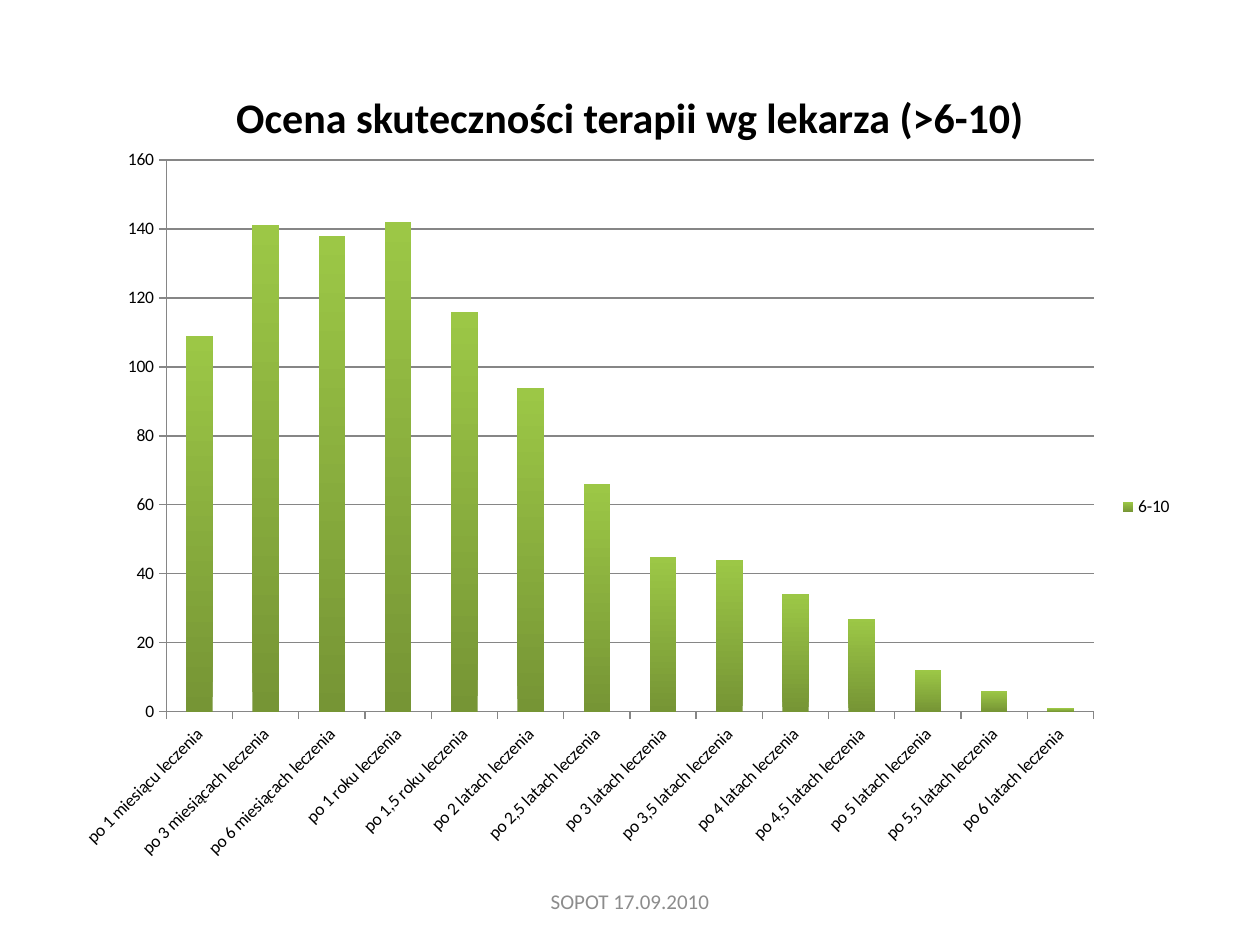
import pptx
import pptx.chart.data
import pptx.dml.color
import pptx.enum.chart
import pptx.enum.text
import pptx.oxml
import pptx.oxml.ns
import pptx.util
from dataclasses import dataclass


@dataclass(frozen=True)
class Theme:
    font: str = "Calibri"
    text: str = "000000"
    muted: str = "8C8C8C"
    line: str = "868686"
    bar_bottom: str = "769535"
    bar_top: str = "9CC746"
    title_size: int = 24
    footer_size: int = 12
    chart_size: int = 10


THEME = Theme()
WIDTH, HEIGHT = 10, 7.5
PERIODS = [
    "1 miesiącu", "3 miesiącach", "6 miesiącach", "1 roku", "1,5 roku",
    "2 latach", "2,5 latach", "3 latach", "3,5 latach", "4 latach",
    "4,5 latach", "5 latach", "5,5 latach", "6 latach",
]
RATINGS = [109, 141, 138, 142, 116, 94, 66, 45, 44, 34, 27, 12, 6, 1]


def color(value):
    return pptx.dml.color.RGBColor.from_string(value)


def inches(box):
    return [pptx.util.Inches(length) for length in box]


def add_text(page, box, text, size, fill, bold=False):
    frame = page.shapes.add_textbox(*inches(box)).text_frame
    frame.word_wrap = True
    frame.vertical_anchor = pptx.enum.text.MSO_ANCHOR.MIDDLE
    para = frame.paragraphs[0]
    para.alignment = pptx.enum.text.PP_ALIGN.CENTER
    span = para.add_run()
    span.text = text
    span.font.name = THEME.font
    span.font.size = pptx.util.Pt(size)
    span.font.bold = bold
    span.font.color.rgb = color(fill)


def style_line(line):
    line.color.rgb = color(THEME.line)
    line.width = pptx.util.Pt(0.75)


def set_plot_area(chart, box, left, top, right, bottom):
    """Fix the inner plot area by its margins, in inches, inside the box."""
    _, _, width, height = box
    shares = {"x": left / width, "y": top / height,
              "w": 1 - (left + right) / width,
              "h": 1 - (top + bottom) / height}
    plot_area = chart.element.chart.plotArea
    for old in plot_area.findall(pptx.oxml.ns.qn("c:layout")):
        plot_area.remove(old)
    values = "".join(f'<c:{key} val="{share:.5f}"/>'
                     for key, share in shares.items())
    plot_area.insert(0, pptx.oxml.parse_xml(
        f'<c:layout {pptx.oxml.ns.nsdecls("c")}><c:manualLayout>'
        '<c:layoutTarget val="inner"/>'
        '<c:xMode val="edge"/><c:yMode val="edge"/>'
        f'{values}</c:manualLayout></c:layout>'))


def add_ratings_chart(page, box):
    data = pptx.chart.data.CategoryChartData()
    data.categories = [f"po {period} leczenia" for period in PERIODS]
    data.add_series("6-10", RATINGS)
    kind = pptx.enum.chart.XL_CHART_TYPE.COLUMN_CLUSTERED
    chart = page.shapes.add_chart(kind, *inches(box), data).chart
    chart.has_title = False
    chart.font.name = THEME.font
    chart.font.size = pptx.util.Pt(THEME.chart_size)
    chart.font.color.rgb = color(THEME.text)
    set_plot_area(chart, box, left=0.89, top=0.2, right=0.73, bottom=1.33)

    # Legend
    chart.has_legend = True
    chart.legend.position = pptx.enum.chart.XL_LEGEND_POSITION.RIGHT
    chart.legend.include_in_layout = False

    # Axes
    for axis in (chart.category_axis, chart.value_axis):
        axis.major_tick_mark = pptx.enum.chart.XL_TICK_MARK.OUTSIDE
        axis.minor_tick_mark = pptx.enum.chart.XL_TICK_MARK.NONE
        axis.tick_labels.font.size = pptx.util.Pt(THEME.chart_size)
        style_line(axis.format.line)
    chart.value_axis.minimum_scale = 0
    chart.value_axis.maximum_scale = 160
    chart.value_axis.major_unit = 20
    chart.value_axis.has_major_gridlines = True
    style_line(chart.value_axis.major_gridlines.format.line)

    # Slanted category labels
    for body in chart.element.xpath(".//c:catAx/c:txPr/a:bodyPr"):
        body.set("rot", str(-45 * 60000))
        body.set("vert", "horz")

    # Bars, shaded from bottom to top
    plot = chart.plots[0]
    plot.gap_width = 150
    plot.vary_by_categories = False
    fill = plot.series[0].format.fill
    fill.gradient()
    fill.gradient_angle = 90
    shades = ((0, THEME.bar_bottom), (1, THEME.bar_top))
    for stop, (position, shade) in zip(fill.gradient_stops, shades):
        stop.position = position
        stop.color.rgb = color(shade)


def build_page(page, width, height):
    # Title
    add_text(page, (0.05 * width, 0.04 * height, 0.9 * width, height / 6),
             "Ocena skuteczności terapii wg lekarza (>6-10)",
             size=THEME.title_size, fill=THEME.text, bold=True)
    # Chart
    add_ratings_chart(page, (0.43, 1.07, 8.98, 5.91))
    # Footer
    footer_width = 3.17
    add_text(page, ((width - footer_width) / 2, 6.95, footer_width, 0.4),
             "SOPOT 17.09.2010", size=THEME.footer_size, fill=THEME.muted)


def main():
    deck = pptx.Presentation()
    deck.slide_width, deck.slide_height = inches((WIDTH, HEIGHT))
    page = deck.slides.add_slide(deck.slide_layouts[6])
    build_page(page, WIDTH, HEIGHT)
    deck.save("out.pptx")


if __name__ == "__main__":
    main()
